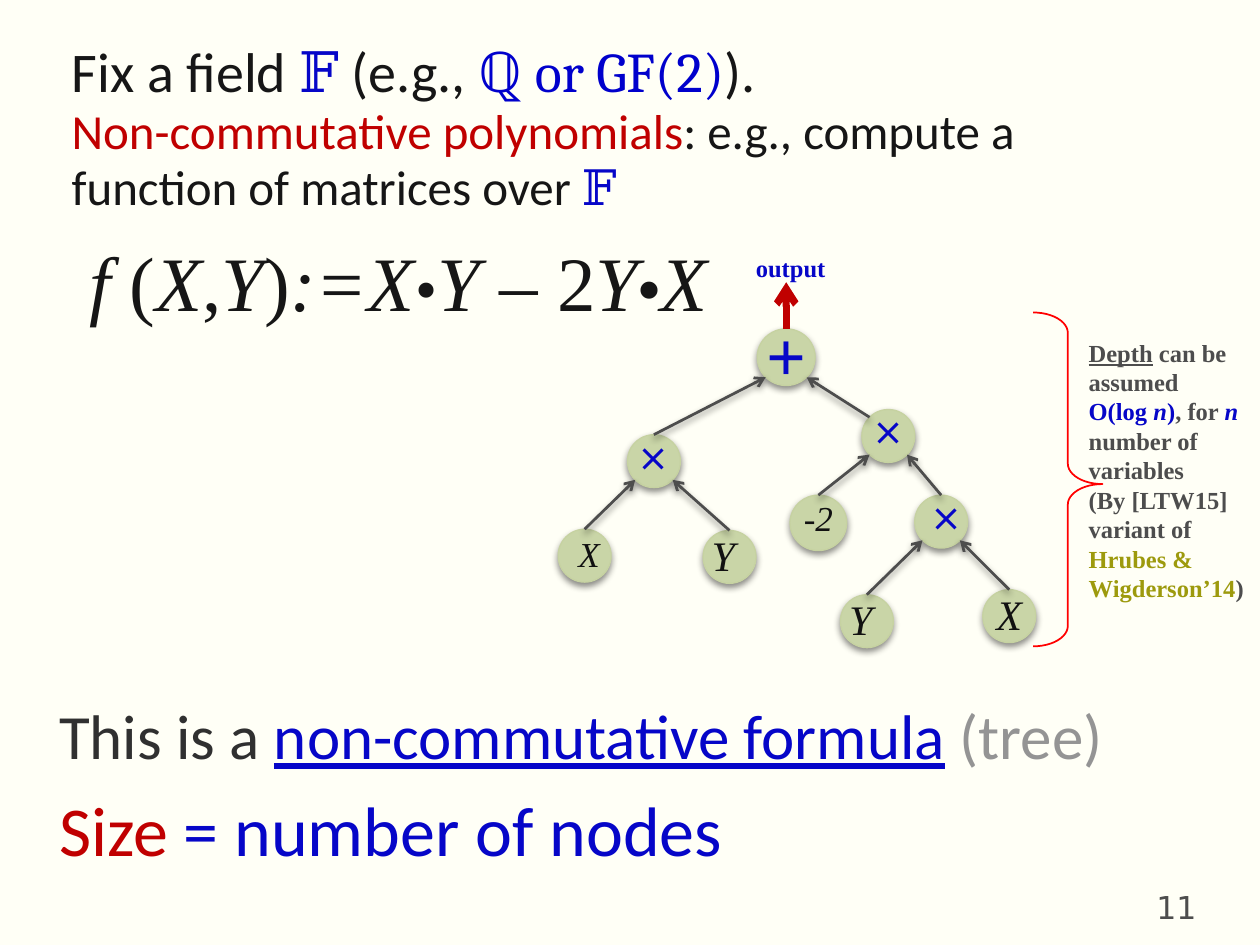
from math import sqrt

from lxml import etree
from pptx import Presentation
from pptx.dml.color import RGBColor
from pptx.enum.shapes import MSO_CONNECTOR, MSO_SHAPE
from pptx.enum.text import MSO_ANCHOR, PP_ALIGN
from pptx.oxml.ns import qn
from pptx.util import Inches, Pt

STRAIGHT = MSO_CONNECTOR.STRAIGHT
OVAL = MSO_SHAPE.OVAL
BRACE = MSO_SHAPE.RIGHT_BRACE
MIDDLE = MSO_ANCHOR.MIDDLE
TOP = MSO_ANCHOR.TOP
CENTER = PP_ALIGN.CENTER
LEFT = PP_ALIGN.LEFT

COLORS = {
    "page": "FFFFF6", "ink": "161616", "dark": "303030", "letter": "111111",
    "gray": "4D4D4D", "pale": "949494", "blue": "0606C8", "deep_blue": "0000CC",
    "red": "C00000", "brace": "FF0000", "olive": "9D9A0D",
    "node": "C9D5A7", "node_line": "C6D2A1", "shadow": "000000",
}
SANS = "Calibri"
MATH = "Cambria"
SERIF = "Times New Roman"


def color(name):
    return RGBColor.from_string(COLORS[name])


def write_para(para, spans, base, **layout):
    for name, value in layout.items():
        setattr(para, name, value)
    for text, changes in spans:
        span = para.add_run()
        span.text = text
        values = {**base, **changes}
        span.font.color.rgb = color(values.pop("color"))
        for name, value in values.items():
            setattr(span.font, name, value)


def set_frame(shape, margins, anchor=TOP):
    frame = shape.text_frame
    frame.word_wrap = True
    frame.vertical_anchor = anchor
    for side, margin in zip(("left", "top", "right", "bottom"), margins):
        setattr(frame, f"margin_{side}", Inches(margin))
    return frame


def add_text(page, box, paras, base, margins=(0.1, 0.05, 0.1, 0.05), **layout):
    shape = page.shapes.add_textbox(*map(Inches, box))
    frame = set_frame(shape, margins)
    for index, spans in enumerate(paras):
        para = frame.add_paragraph() if index else frame.paragraphs[0]
        write_para(para, spans, base, **layout)
    return frame


def set_shadow(shape, visible=True):
    effects = etree.SubElement(shape._element.spPr, qn("a:effectLst"))
    if visible:
        shadow = etree.SubElement(
            effects, qn("a:outerShdw"), blurRad=str(Pt(4)), dist=str(Pt(2)),
            dir="5400000", algn="ctr", rotWithShape="0")
        tint = etree.SubElement(shadow, qn("a:srgbClr"), val=COLORS["shadow"])
        etree.SubElement(tint, qn("a:alpha"), val="45000")


def add_arrow(page, start, end, line_color, width, shadow):
    arrow = page.shapes.add_connector(STRAIGHT, *map(int, (*start, *end)))
    arrow.line.color.rgb = color(line_color)
    arrow.line.width = Pt(width)
    etree.SubElement(arrow.line._get_or_add_ln(), qn("a:tailEnd"), type="arrow")
    set_shadow(arrow, shadow)
    return arrow


def add_node(page, box, text, font, margins):
    node = page.shapes.add_shape(OVAL, *map(Inches, box))
    node.fill.solid()
    node.fill.fore_color.rgb = color("node")
    node.line.color.rgb = color("node_line")
    node.line.width = Pt(0.75)
    set_shadow(node)
    frame = set_frame(node, margins, MIDDLE)
    write_para(frame.paragraphs[0], [(text, {})], font,
               alignment=CENTER, line_spacing=0.95)
    return node


def diagonal_point(node, side, level):
    reach = 1 / (2 * sqrt(2))
    return (node.left + node.width * (0.5 + side * reach),
            node.top + node.height * (0.5 + level * reach))


def top_point(node):
    return node.left + node.width / 2, node.top


def add_tree(page, box):
    left, top, width, height = box
    size = 0.42
    times = {"name": SERIF, "size": Pt(36), "color": "blue"}
    plus = {**times, "size": Pt(40), "bold": True}
    letter = {"name": SERIF, "size": Pt(24), "color": "letter", "italic": True}
    small = {**letter, "size": Pt(20)}
    times_margins = (0, 0.2, 0, 0.05)
    leaf_margins = (0, 0.05, 0.1, 0.05)
    specs = {
        "sum": (1.58, 0, 0.46, 0.45, "+", plus, (0, 0, 0, 0)),
        "left product": (0.55, 0.84, size, size, "˟", times, times_margins),
        "right product": (2.41, 0.64, size, size, "˟", times, times_margins),
        "inner product": (2.83, 1.32, size, size, "˟", times, (0.1, 0.2, 0.1, 0.05)),
        "left X": (0, 1.59, size, size, "X", small, (0.1, 0.05, 0.1, 0.05)),
        "left Y": (1.15, 1.6, size, size, "Y", letter, leaf_margins),
        "constant": (1.84, 1.32, 0.45, 0.44, "-2", small, (0, 0, 0, 0.05)),
        "inner Y": (2.24, 2.11, size, size, "Y", letter, leaf_margins),
        "inner X": (width - size, height - size, size, size, "X", letter, (0, 0.05, 0, 0.05)),
    }
    nodes = {
        name: add_node(page, (left + x, top + y, w, h), text, font, margins)
        for name, (x, y, w, h, text, font, margins) in specs.items()
    }
    edges = [
        ("left product", "sum", -1), ("right product", "sum", 1),
        ("left X", "left product", -1), ("left Y", "left product", 1),
        ("constant", "right product", -1), ("inner product", "right product", 1),
        ("inner Y", "inner product", -1), ("inner X", "inner product", 1),
    ]
    for child, parent, side in edges:
        from_corner = child == "right product"
        start = diagonal_point(nodes[child], -1, -1) if from_corner else top_point(nodes[child])
        edge = add_arrow(page, start, diagonal_point(nodes[parent], side, 1),
                         "gray", 1.57, True)
        if not from_corner:
            edge.begin_connect(nodes[child], 0)
    x, y = top_point(nodes["sum"])
    add_arrow(page, (x, y), (x, y - Inches(0.37)), "red", 4, False)
    add_text(page, (left + 1.26, top - 0.65, 1.17, 0.34), [[("output", {})]],
             {"name": SERIF, "size": Pt(14), "color": "blue", "bold": True},
             alignment=CENTER)


def add_heading(page, box):
    field = {"name": MATH, "color": "blue"}
    large = {"size": Pt(32)}
    add_text(page, box, [
        [("Fix a field ", large), ("𝔽", {**large, **field}), (" (e.g., ", large),
         ("ℚ or GF(2)", {**large, "name": MATH, "color": "deep_blue"}), (").", large)],
        [("Non-commutative polynomials", {"color": "red"}),
         (": e.g., compute a function of matrices over ", {}), ("𝔽", field)],
    ], {"name": SANS, "size": Pt(28), "color": "ink"}, line_spacing=Pt(32))


def add_formula(page, box):
    upright = {"italic": False}
    dot = {"italic": False, "size": Pt(36)}
    add_text(page, box, [[
        ("f ", {}), ("(", upright), ("X", {}), (",", upright), ("Y", {}),
        (")", upright), (":=X", {}), ("•", dot), ("Y ", {}), ("– 2", upright),
        ("Y", {}), ("•", {**dot, "bold": True}), ("X", {}),
    ]], {"name": SERIF, "size": Pt(44), "color": "ink", "italic": True},
        line_spacing=Pt(32))


def add_depth_note(page, box):
    left, top, width, height = box
    brace = page.shapes.add_shape(BRACE, *map(Inches, (left, top, 0.55, height)))
    brace.shadow.inherit = False
    brace.fill.background()
    brace.line.color.rgb = color("brace")
    brace.line.width = Pt(1)
    for index, value in enumerate((0.295, 0.514)):
        brace.adjustments[index] = value
    blue = {"color": "blue"}
    variable = {"color": "blue", "italic": True}
    add_text(page, (left + 0.44, top + 0.2, width - 0.44, 2.4), [
        [("Depth", {"underline": True}), (" can be assumed", {})],
        [("O(log ", blue), ("n", variable), (")", blue), (", for ", {}),
         ("n", variable), (" number of variables", {})],
        [("(By [LTW15] variant of ", {}),
         ("Hrubes & Wigderson’14", {"color": "olive"}), (")", {})],
    ], {"name": SERIF, "size": Pt(14), "color": "gray", "bold": True}, (0, 0, 0, 0))


def add_conclusion(page, box):
    large = {"size": Pt(40)}
    frame = add_text(page, box, [
        [("This is a ", {"color": "dark"}),
         ("non-commutative formula", {"underline": True}),
         (" ", {}), ("(tree)", {"color": "pale"})],
        [("Size ", {**large, "color": "red"}), ("= number of nodes", large)],
    ], {"name": SANS, "size": Pt(36), "color": "blue"})
    frame.paragraphs[1].space_before = Pt(8)


def main():
    deck = Presentation()
    deck.slide_width, deck.slide_height = Inches(10), Inches(7.5)
    page = deck.slides.add_slide(deck.slide_layouts[6])
    page.background.fill.solid()
    page.background.fill.fore_color.rgb = color("page")
    add_heading(page, (0.47, 0.33, 9.02, 1.45))
    add_formula(page, (0.61, 2.1, 5.4, 0.6))
    add_tree(page, (4.43, 2.61, 3.79, 2.49))
    add_depth_note(page, (8.2, 2.48, 1.82, 2.65))
    add_conclusion(page, (0.37, 5.48, 9.12, 1.5))
    add_text(page, (9.08, 7, 0.67, 0.33), [[("11", {})]],
             {"name": "DejaVu Sans", "size": Pt(18), "color": "gray"}, alignment=LEFT)
    deck.save("out.pptx")


if __name__ == "__main__":
    main()
